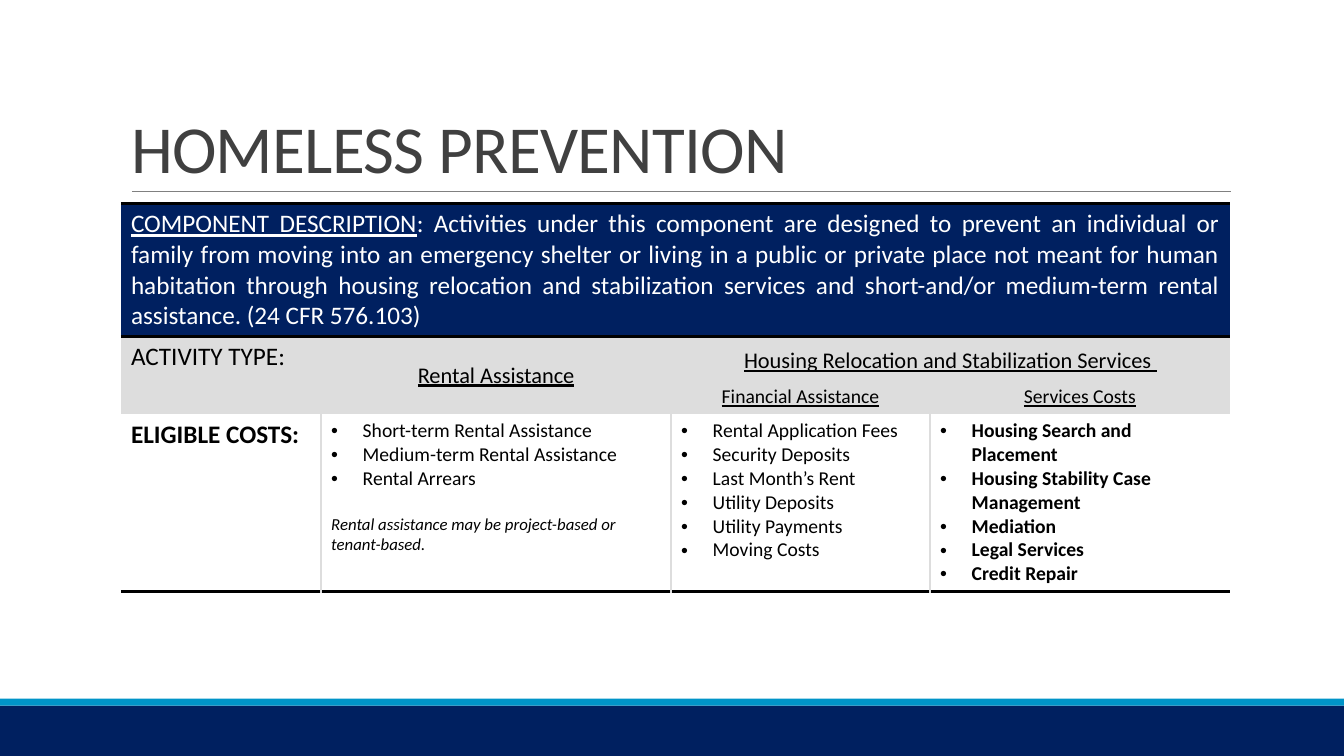
import pptx
import pptx.util
import pptx.dml.color
import pptx.enum.shapes
import pptx.enum.text
import pptx.oxml.ns
from dataclasses import dataclass
from lxml import etree

Pt = pptx.util.Pt
qn = pptx.oxml.ns.qn
Align = pptx.enum.text.PP_ALIGN
Anchor = pptx.enum.text.MSO_ANCHOR


@dataclass(frozen=True)
class Theme:
    face: str = "Calibri"
    navy: str = "002060"
    blue: str = "0094C8"
    gray: str = "DDDDDD"
    rule: str = "808080"
    dark: str = "404040"
    black: str = "000000"
    white: str = "FFFFFF"
    title: int = 48
    lead: int = 18
    head: int = 16
    body: int = 14
    note: int = 12


theme = Theme()
WIDTH, HEIGHT = 960, 540
LEFT, SPAN = 86.4, 792
COLS = (143, 250, 185, 214)
ROWS = (95, 31, 24, 127)
EDGE = 2.25
INDENT = 22.5

COSTS = (
    ("Short-term Rental Assistance", "Medium-term Rental Assistance", "Rental Arrears"),
    ("Rental Application Fees", "Security Deposits", "Last Month’s Rent",
     "Utility Deposits", "Utility Payments", "Moving Costs"),
    ("Housing Search and Placement", "Housing Stability Case Management",
     "Mediation", "Legal Services", "Credit Repair"),
)
DETAIL = (
    ": Activities under this component are designed to prevent an individual or "
    "family from moving into an emergency shelter or living in a public or private "
    "place not meant for human habitation through housing relocation and "
    "stabilization services and short-and/or medium-term rental assistance. "
    "(24 CFR 576.103)"
)


def rgb(code):
    return pptx.dml.color.RGBColor.from_string(code)


def style(para, size, color=theme.black, align=Align.LEFT, **flags):
    para.alignment = align
    font = para.font
    font.name = theme.face
    font.size = Pt(size)
    font.color.rgb = rgb(color)
    for name, value in flags.items():
        setattr(font, name, value)


def add_bar(slide, top, height, color):
    bar = slide.shapes.add_shape(
        pptx.enum.shapes.MSO_SHAPE.RECTANGLE, 0, Pt(top), Pt(WIDTH), Pt(height))
    bar.shadow.inherit = False
    bar.fill.solid()
    bar.fill.fore_color.rgb = rgb(color)
    bar.line.fill.background()


def add_rule(slide, left, right, top):
    line = slide.shapes.add_connector(
        pptx.enum.shapes.MSO_CONNECTOR.STRAIGHT, Pt(left), Pt(top), Pt(right), Pt(top))
    line.line.color.rgb = rgb(theme.rule)
    line.line.width = Pt(0.5)
    etree.SubElement(line._element.spPr, qn("a:effectLst"))


def set_title(slide, text):
    title = slide.shapes.title
    title.left, title.top = Pt(LEFT), Pt(22.5)
    title.width, title.height = Pt(SPAN), Pt(114.5)
    frame = title.text_frame
    frame.text = text
    frame.word_wrap = True
    frame.auto_size = pptx.enum.text.MSO_AUTO_SIZE.NONE
    frame.vertical_anchor = Anchor.BOTTOM
    para = frame.paragraphs[0]
    para.line_spacing = 0.85
    style(para, theme.title, theme.dark)
    para._p.pPr.find(qn("a:defRPr")).set("spc", "-50")


def set_edges(cell, **edges):
    props = cell._tc.get_or_add_tcPr()
    for side in "LRTB":
        color = edges.get(side)
        line = etree.SubElement(props, qn(f"a:ln{side}"), w=str(int(Pt(EDGE))))
        if color:
            fill = etree.SubElement(line, qn("a:solidFill"))
            etree.SubElement(fill, qn("a:srgbClr"), val=color)
        else:
            etree.SubElement(line, qn("a:noFill"))


def paint_cell(cell, row, col):
    edges = {}
    if row == 0:
        edges.update(T=theme.black, B=theme.black)
    if row == 1:
        edges.update(T=theme.black)
    if row == 3:
        edges.update(B=theme.black)
        if col > 0:
            edges.update(L=theme.gray)
        if col < len(COLS) - 1:
            edges.update(R=theme.gray)
    set_edges(cell, **edges)
    if row == 3:
        cell.fill.background()
    else:
        cell.fill.solid()
        cell.fill.fore_color.rgb = rgb(theme.gray if row else theme.navy)


def set_label(cell, text, size, anchor=Anchor.TOP, **look):
    cell.vertical_anchor = anchor
    cell.text = text
    style(cell.text_frame.paragraphs[0], size, **look)


def add_list(cell, items, **look):
    frame = cell.text_frame
    for spot, item in enumerate(items):
        para = frame.add_paragraph() if spot else frame.paragraphs[0]
        para.text = item
        props = para._p.get_or_add_pPr()
        props.set("marL", str(int(Pt(INDENT))))
        props.set("indent", str(-int(Pt(INDENT))))
        etree.SubElement(props, qn("a:buFont"), typeface="Arial")
        etree.SubElement(props, qn("a:buChar"), char="•")
        style(para, theme.body, **look)


def add_note(cell, text):
    para = cell.text_frame.add_paragraph()
    para.text = text
    para.space_before = Pt(17)
    style(para, theme.note, italic=True)


def add_lead(cell, label, detail):
    para = cell.text_frame.paragraphs[0]
    style(para, theme.lead, theme.white, Align.JUSTIFY)
    head = para.add_run()
    head.text = label
    head.font.underline = True
    para.add_run().text = detail


def add_grid(slide):
    frame = slide.shapes.add_table(
        len(ROWS), len(COLS), Pt(LEFT), Pt(145.4), Pt(SPAN), Pt(sum(ROWS)))
    table = frame.table
    table.first_row = table.horz_banding = False
    for col, width in zip(table.columns, COLS):
        col.width = Pt(width)
    for row, height in zip(table.rows, ROWS):
        row.height = Pt(height)
    for row in range(len(ROWS)):
        for col in range(len(COLS)):
            paint_cell(table.cell(row, col), row, col)
    for start, end in (((0, 0), (0, 3)), ((1, 0), (2, 0)),
                       ((1, 1), (2, 1)), ((1, 2), (1, 3))):
        table.cell(*start).merge(table.cell(*end))
    return table


def main():
    deck = pptx.Presentation()
    deck.slide_width, deck.slide_height = Pt(WIDTH), Pt(HEIGHT)
    slide = deck.slides.add_slide(deck.slide_layouts[5])
    add_bar(slide, 504, 36, theme.navy)
    add_bar(slide, 499, 5, theme.blue)
    add_rule(slide, 94.3, 879, 136.8)
    set_title(slide, "HOMELESS PREVENTION")

    cell = add_grid(slide).cell
    add_lead(cell(0, 0), "COMPONENT DESCRIPTION", DETAIL)
    set_label(cell(1, 0), "ACTIVITY TYPE:", theme.lead)
    for row, col, text, size, anchor in (
        (1, 1, "Rental Assistance", theme.head, Anchor.MIDDLE),
        (1, 2, "Housing Relocation and Stabilization Services ", theme.head, Anchor.BOTTOM),
        (2, 2, "Financial Assistance", theme.body, Anchor.MIDDLE),
        (2, 3, "Services Costs", theme.body, Anchor.MIDDLE),
    ):
        set_label(cell(row, col), text, size, anchor, align=Align.CENTER, underline=True)
    set_label(cell(3, 0), "ELIGIBLE COSTS:", theme.lead, bold=True)
    for col, items in enumerate(COSTS, 1):
        add_list(cell(3, col), items, bold=col == 3)
    add_note(cell(3, 1), "Rental assistance may be project-based or tenant-based.")
    deck.save("out.pptx")


if __name__ == "__main__":
    main()
